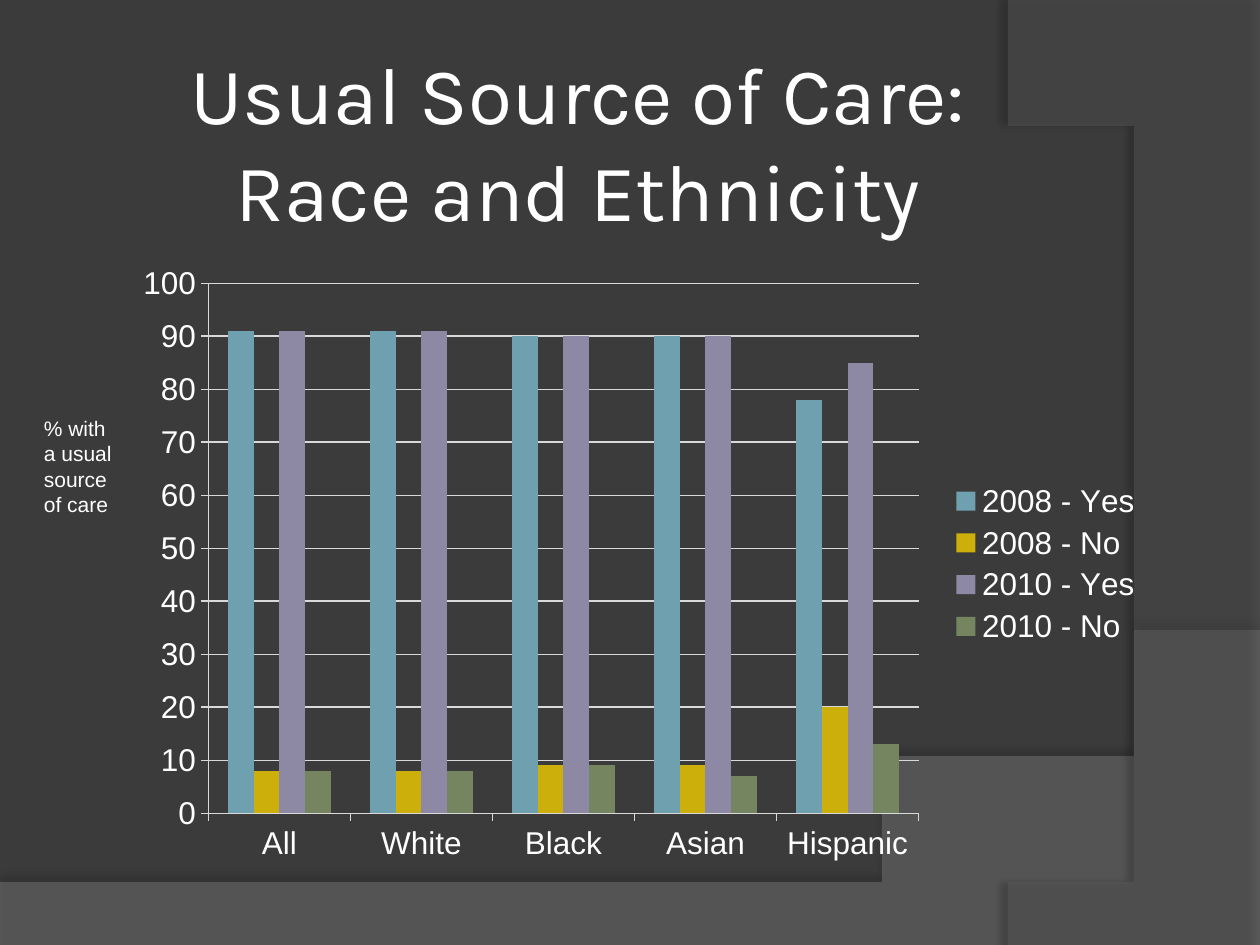
from lxml import etree
from pptx import Presentation
from pptx.chart.data import CategoryChartData
from pptx.dml.color import RGBColor
from pptx.enum.chart import XL_CHART_TYPE, XL_LEGEND_POSITION, XL_TICK_MARK
from pptx.enum.text import MSO_ANCHOR, PP_ALIGN
from pptx.oxml import parse_xml
from pptx.oxml.ns import nsdecls, qn
from pptx.util import Inches, Pt

COLORS = {"background": "3B3B3B", "text": "FFFFFF", "grid": "D9D9D9",
          "wave": "7F7F7F", "arc": "5E5E5E", "shadow": "000000"}
TITLE = ["Usual Source of Care:", "Race and Ethnicity"]
AXIS_NOTE = "% with a usual source of care"
CATEGORIES = ["All", "White", "Black", "Asian", "Hispanic"]
SERIES = [
    ("2008 - Yes", [91, 91, 90, 90, 78], "6EA0B0"),
    ("2008 - No", [8, 8, 9, 9, 20], "CCAF0A"),
    ("2010 - Yes", [91, 91, 90, 90, 85], "8D89A4"),
    ("2010 - No", [8, 8, 9, 7, 13], "748560"),
]
PLOT_LAYOUT = {"x": 0.08, "y": 0.05, "w": 0.69, "h": 0.85}
WAVE_CURVE = [(10, 5.2), (5.59, 7.29), (3.91, 7.19), (0, 7.05)]
ARC_CURVE = [(8.21, 7.5), (9.35, 6.19), (10.18, 3), (8, 0)]
BACKDROP = [
    {"points": [(0, 7.5), (10, 7.5)], "curve": WAVE_CURVE, "color": "wave",
     "alpha": 45, "shadow_alpha": 35, "distance": 3.5, "direction": 270},
    {"points": [(10, 0.02), (10, 7.5)], "curve": ARC_CURVE, "color": "arc",
     "alpha": 40, "shadow_alpha": 45, "distance": 4, "direction": 180},
]


def rgb(name):
    return RGBColor.from_string(COLORS.get(name, name))


def bezier(controls, steps=60):
    weights = (1, 3, 3, 1)
    return [tuple(sum(weight * (1 - t) ** (3 - power) * t ** power * point[axis]
                      for power, (weight, point) in enumerate(zip(weights, controls)))
                  for axis in (0, 1))
            for t in (step / steps for step in range(steps + 1))]


def add_backdrop(slide, piece):
    points = piece["points"] + bezier(piece["curve"])
    builder = slide.shapes.build_freeform(*points[0], scale=Inches(1))
    builder.add_line_segments(points[1:], close=True)
    shape = builder.convert_to_shape()
    shape.fill.solid()
    shape.fill.fore_color.rgb = rgb(piece["color"])
    shape.line.fill.background()
    fill = shape.fill.fore_color._xFill
    etree.SubElement(fill[0], qn("a:alpha"), val=str(piece["alpha"] * 1000))
    shape._element.spPr.append(parse_xml(
        f'<a:effectLst {nsdecls("a")}><a:outerShdw blurRad="{Pt(4)}" '
        f'dist="{Pt(piece["distance"])}" dir="{piece["direction"] * 60000}" rotWithShape="0">'
        f'<a:srgbClr val="{COLORS["shadow"]}"><a:alpha val="{piece["shadow_alpha"] * 1000}"/>'
        '</a:srgbClr></a:outerShdw></a:effectLst>'))


def format_text(text_frame, font_name, size, alignment):
    for paragraph in text_frame.paragraphs:
        paragraph.alignment = alignment
        for run in paragraph.runs:
            run.font.name = font_name
            run.font.size = Pt(size)
            run.font.color.rgb = rgb("text")


def add_title(slide):
    title = slide.shapes.title
    title.left, title.top, title.width, title.height = map(Inches, (0.5, 0.25, 8.17, 1.5))
    text_frame = title.text_frame
    text_frame.text = "\n".join(TITLE)
    text_frame.vertical_anchor = MSO_ANCHOR.TOP
    text_frame.margin_top = Inches(0.1)
    format_text(text_frame, "Karla", 46, PP_ALIGN.CENTER)


def add_chart(slide):
    data = CategoryChartData()
    data.categories = CATEGORIES
    for name, values, color in SERIES:
        data.add_series(name, values)
    chart = slide.shapes.add_chart(XL_CHART_TYPE.COLUMN_CLUSTERED,
                                   *map(Inches, (1, 2, 8.17, 4.95)), data).chart
    chart.has_title = False
    chart.font.name = "Arial"
    chart.font.size = Pt(18)
    chart.font.color.rgb = rgb("text")
    chart.has_legend = True
    chart.legend.position = XL_LEGEND_POSITION.RIGHT
    chart.legend.include_in_layout = False

    plot = chart.plots[0]
    plot.gap_width = 150
    plot.overlap = 0
    plot.vary_by_categories = False
    for series, (name, values, color) in zip(plot.series, SERIES):
        series.format.fill.solid()
        series.format.fill.fore_color.rgb = rgb(color)

    value_axis = chart.value_axis
    value_axis.minimum_scale = 0
    value_axis.maximum_scale = 100
    value_axis.major_unit = 10
    value_axis.has_major_gridlines = True
    chart.category_axis.major_tick_mark = XL_TICK_MARK.OUTSIDE
    value_axis.major_tick_mark = XL_TICK_MARK.OUTSIDE
    for part in (value_axis, chart.category_axis, value_axis.major_gridlines):
        part.format.line.color.rgb = rgb("grid")
        part.format.line.width = Pt(0.75)

    plot_area = chart._chartSpace.chart.plotArea
    for old_layout in plot_area.findall(qn("c:layout")):
        plot_area.remove(old_layout)
    sizes = "".join(f'<c:{key} val="{value}"/>' for key, value in PLOT_LAYOUT.items())
    plot_area.insert(0, parse_xml(
        f'<c:layout {nsdecls("c")}><c:manualLayout><c:layoutTarget val="inner"/>'
        f'<c:xMode val="edge"/><c:yMode val="edge"/>{sizes}</c:manualLayout></c:layout>'))


def add_axis_note(slide):
    text_frame = slide.shapes.add_textbox(*map(Inches, (0.25, 3.25, 0.75, 0.91))).text_frame
    text_frame.word_wrap = True
    text_frame.text = AXIS_NOTE
    format_text(text_frame, "Arial", 12, PP_ALIGN.LEFT)


def main():
    presentation = Presentation()
    presentation.slide_width, presentation.slide_height = Inches(10), Inches(7.5)
    slide = presentation.slides.add_slide(presentation.slide_layouts[5])
    slide.background.fill.solid()
    slide.background.fill.fore_color.rgb = rgb("background")
    for piece in BACKDROP:
        add_backdrop(slide, piece)
    add_title(slide)
    add_chart(slide)
    add_axis_note(slide)
    presentation.save("out.pptx")


if __name__ == "__main__":
    main()
